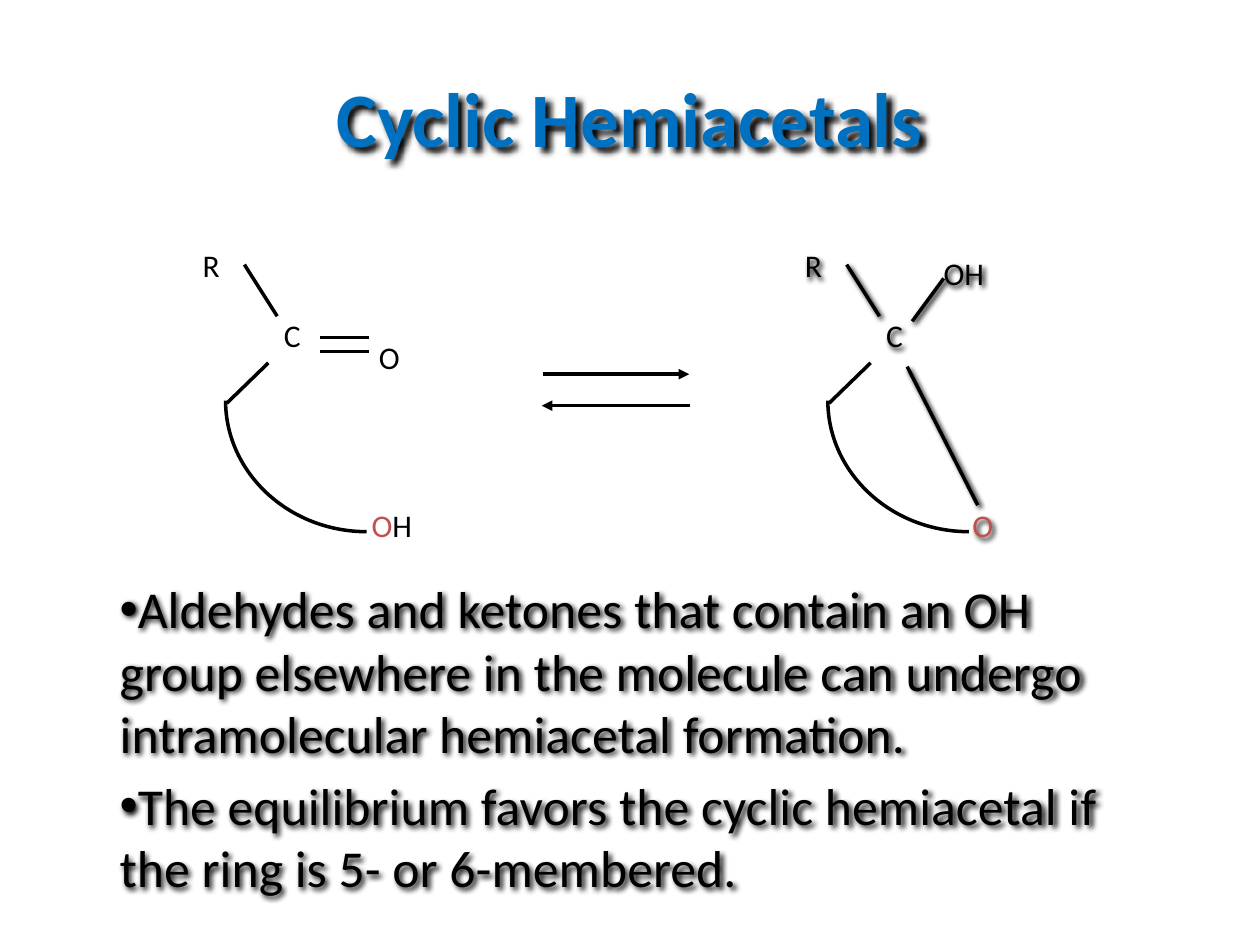
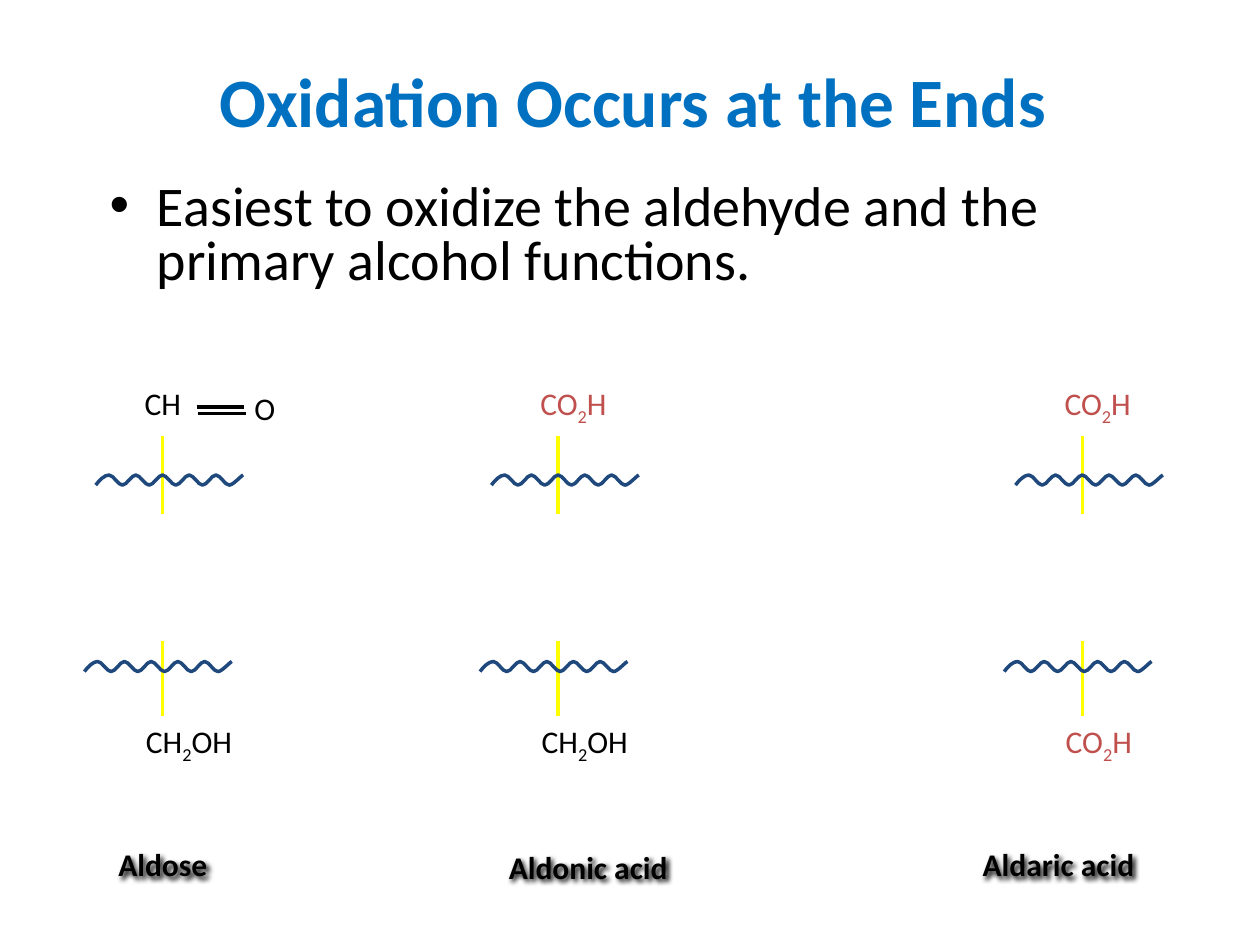
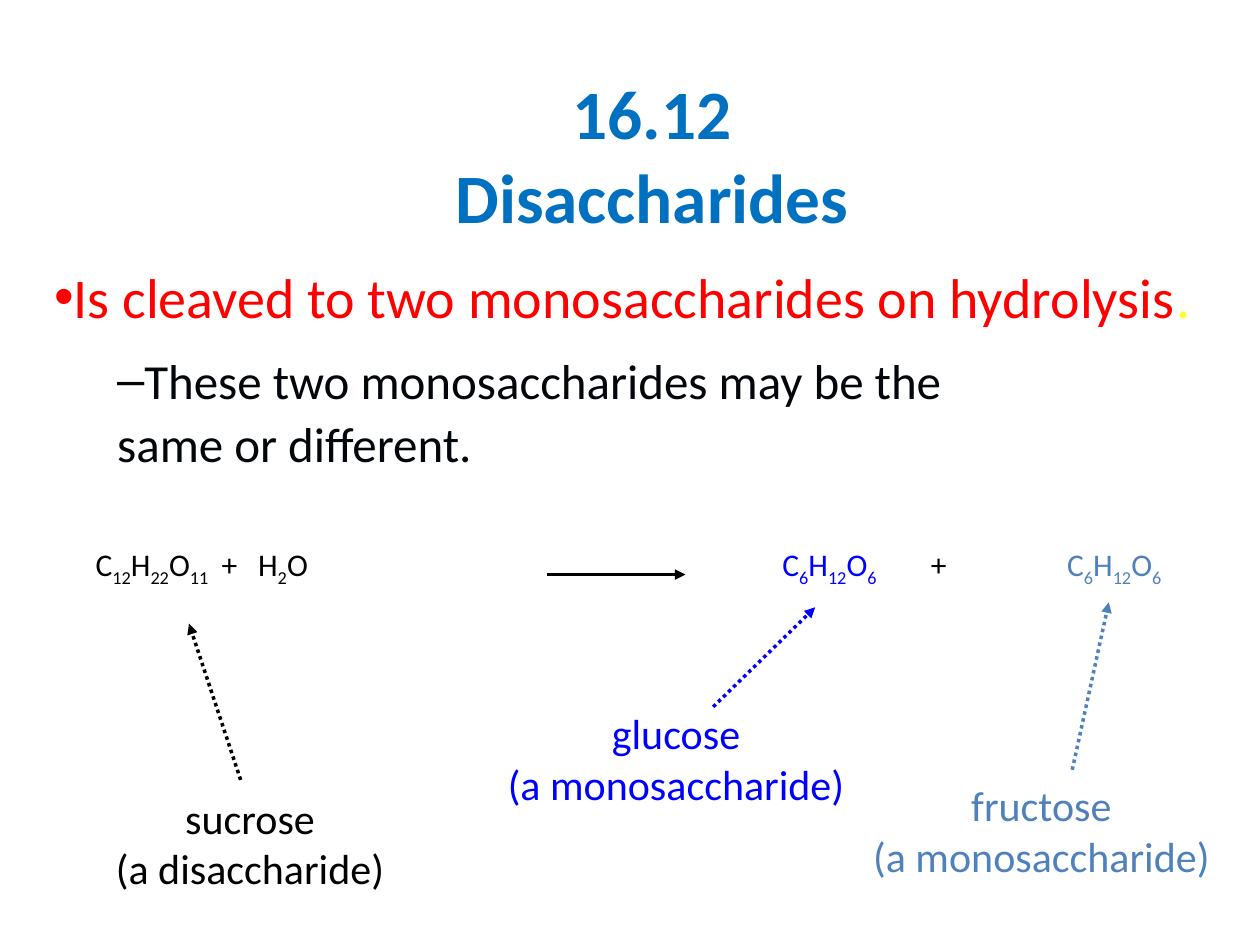
from lxml.etree import SubElement as sub
from pptx import Presentation
from pptx.dml.color import RGBColor
from pptx.enum.dml import MSO_LINE as Dash
from pptx.enum.shapes import MSO_CONNECTOR as Conn
from pptx.enum.text import MSO_ANCHOR as Anchor, MSO_AUTO_SIZE as Fit, PP_ALIGN as Align
from pptx.oxml.ns import qn
from pptx.util import Emu, Pt

SCALE = 9144
FONT = "Calibri"
BLACK = RGBColor(0x00, 0x00, 0x00)
TITLE = RGBColor(0x00, 0x70, 0xC0)
BRICK = RGBColor(0xC0, 0x50, 0x4D)
YELLOW = RGBColor(0xFF, 0xFF, 0x00)
LEMON = RGBColor(0xFE, 0xFF, 0x2A)
NAVY = RGBColor(0x1F, 0x49, 0x7D)
RED = RGBColor(0xFF, 0x00, 0x00)
INK = RGBColor(0x03, 0x07, 0x0C)
BLUE = RGBColor(0x00, 0x00, 0xFF)
STEEL = RGBColor(0x4F, 0x81, 0xBD)


def px(num):
    """Turn px into EMU."""
    return Emu(round(num * SCALE))


def shade(shape, on=True, far=2):
    """Give a shape a soft black shadow, or none."""
    fx = sub(shape._element.spPr, qn("a:effectLst"))
    if on:
        drop = sub(fx, qn("a:outerShdw"), blurRad=str(Pt(3)), dist=str(Pt(far)),
                   dir="2700000", algn="tl", rotWithShape="0")
        sub(drop, qn("a:srgbClr"), val=str(BLACK))


def style(para, size, tint=BLACK, bold=False):
    """Set the font of a whole paragraph."""
    font = para.font
    font.name, font.size, font.bold = FONT, Pt(size), bold
    font.color.rgb = tint


def write(para, text, tint=None):
    """Add runs, with the parts between underscores as subscripts."""
    for i, part in enumerate(text.split("_")):
        if part:
            run = para.add_run()
            run.text = part
            if tint is not None:
                run.font.color.rgb = tint
            if i % 2:
                run._r.get_or_add_rPr().set("baseline", "-25000")


def place(shape, box):
    """Move a placeholder and keep its text size fixed."""
    shape.left, shape.top, shape.width, shape.height = map(px, box)
    shape.text_frame.auto_size = Fit.NONE


def start(deck, text, box, size=39.6):
    """Add a slide with its title and return the slide."""
    slide = deck.slides.add_slide(deck.slide_layouts[1])
    title = slide.shapes.title
    place(title, box)
    title.text_frame.vertical_anchor = Anchor.MIDDLE
    para = title.text_frame.paragraphs[0]
    para.text = text
    para.alignment = Align.CENTER
    style(para, size, TITLE, True)
    return slide


def points(slide, box, items):
    """Fill the body with (text, size, colour, level) items."""
    body = slide.placeholders[1]
    place(body, box)
    frame = body.text_frame
    for i, (text, size, tint, level) in enumerate(items):
        para = frame.add_paragraph() if i else frame.paragraphs[0]
        para.text, para.level = text, level
        style(para, size, tint)
    return body


def flush(para, left=0):
    """Let the bullet run on with the text."""
    props = para._p.get_or_add_pPr()
    props.set("marL", str(px(left)))
    props.set("indent", "0")


def label(slide, box, text, tint=BLACK, size=18, bold=False, align=Align.LEFT,
          lead=None, glow=False):
    """Add one unwrapped text box in one colour."""
    area = slide.shapes.add_textbox(*map(px, box))
    frame = area.text_frame
    frame.word_wrap, frame.auto_size = False, Fit.SHAPE_TO_FIT_TEXT
    para = frame.paragraphs[0]
    para.alignment, para.line_spacing = align, lead
    style(para, size, tint, bold)
    if "_" in text:
        write(para, text)
    else:
        para.text = text
    if glow:
        shade(area)


def sums(slide, box, stops, parts):
    """Add one side of an equation, spaced by tab stops."""
    area = slide.shapes.add_textbox(*map(px, box))
    area.text_frame.word_wrap = True
    para = area.text_frame.paragraphs[0]
    if stops:
        tabs = sub(para._p.get_or_add_pPr(), qn("a:tabLst"))
        for stop in stops:
            sub(tabs, qn("a:tab"), pos=str(px(stop)), algn="l")
    style(para, 18)
    for text, tint in parts:
        write(para, text, tint)


def line(slide, ends, tint=BLACK, arrow=False, dots=False, glow=False):
    """Draw a bond or an arrow."""
    bond = slide.shapes.add_connector(Conn.STRAIGHT, *map(px, ends))
    bond.line.color.rgb, bond.line.width = tint, Pt(2)
    if dots:
        bond.line.dash_style = Dash.ROUND_DOT
    if arrow:
        sub(bond.line._get_or_add_ln(), qn("a:tailEnd"), type="triangle")
    shade(bond, glow)


def curve(slide, left, top, spots, tint=BLACK):
    """Draw Bézier arcs: a first spot, then three spots for each arc."""
    spots = [(px(left + x), px(top + y)) for x, y in spots]
    pen = slide.shapes.build_freeform(*spots[0])
    pen.add_line_segments(spots[1:], close=False)
    shape = pen.convert_to_shape()
    legs = list(shape._element.iter(qn("a:lnTo")))
    trace = legs[0].getparent()
    for i in range(0, len(legs), 3):
        arc = sub(trace, qn("a:cubicBezTo"))
        for leg in legs[i:i + 3]:
            arc.append(leg[0])
            trace.remove(leg)
    shape.fill.background()
    shape.line.color.rgb, shape.line.width = tint, Pt(2)
    shape.shadow.inherit = False


def wave(slide, left, top):
    """Draw a wavy break of eleven half waves."""
    step = 10.6
    spots = [(0, 8), (3, 4), (7, 0), (step, 0)]
    for i in range(2, 11):
        x, y = step * i, 8 - 8 * (i % 2)
        spots += [(x - 7, 8 - y), (x - 3.5, y), (x, y)]
    spots += [(109, 8), (115, 1), (117, 0)]
    curve(slide, left, top, spots, NAVY)


def ring(slide, left, glow):
    """Draw the R, C and chain that both forms share."""
    label(slide, (left + 29, 246, 48, 56), "C", align=Align.CENTER, glow=glow)
    line(slide, (left + 15, 210, left + 41, 251), glow=glow)
    label(slide, (left - 28, 172, 48, 58), "R", lead=Pt(35), glow=glow)
    curve(slide, left, 318, [(112, 104), (50, 104), (0, 57), (0, 0)])
    line(slide, (left + 34, 288, left + 1, 320))


def chain(slide, axis, top, end, tint):
    """Draw a broken sugar chain with its two end groups."""
    line(slide, (axis, 408, axis, 346), YELLOW)
    line(slide, (axis, 509, axis, 568), YELLOW)
    label(slide, (axis - 24, 300, 121, 56), *top)
    label(slide, (axis - 23, 568, 149, 56), end, tint)
    wave(slide, axis - 62, 525)
    wave(slide, axis - 53, 377)


def cyclic(deck):
    """Build the hemiacetal slide."""
    slide = start(deck, "Cyclic Hemiacetals", (50, 30, 900, 125), 44)
    shade(slide.shapes.title, far=3)
    body = points(slide, (85, 453, 831, 278), [
        ("Aldehydes and ketones that contain an OH group elsewhere in the "
         "molecule can undergo intramolecular hemiacetal formation.", 29.6, BLACK, 0),
        ("The equilibrium favors the cyclic hemiacetal if the ring is "
         "5- or 6-membered.", 29.6, BLACK, 0)])
    shade(body)
    for para in body.text_frame.paragraphs:
        flush(para)
    ring(slide, 179, False)
    for y in (268, 279):
        line(slide, (254, y, 293, y))
    label(slide, (291, 245, 50, 58), "O", lead=Pt(35))
    sums(slide, (285, 397, 78, 56), (), [("O", BRICK), ("H", BLACK)])
    line(slide, (431, 297, 547, 297), arrow=True)
    line(slide, (548, 322, 430, 322), arrow=True)
    ring(slide, 657, True)
    label(slide, (739, 178, 78, 58), "OH", lead=Pt(35), glow=True)
    label(slide, (762, 397, 50, 56), "O", BRICK, glow=True)
    line(slide, (724, 255, 749, 221), glow=True)
    line(slide, (720, 291, 776, 401), glow=True)


def ends(deck):
    """Build the oxidation slide."""
    slide = start(deck, "Oxidation Occurs at the Ends", (123, 40, 759, 78))
    body = points(slide, (77, 141, 855, 101), [
        ("Easiest to oxidize the aldehyde and the primary alcohol functions.",
         32, BLACK, 0)])
    body.text_frame.paragraphs[0].line_spacing = 0.8
    acid = ("CO_2_H", BRICK)
    for left, top, wide, name in ((394, 668, 147, "Aldonic acid"),
                                  (770, 666, 142, "Aldaric acid"),
                                  (84, 666, 91, "Aldose")):
        label(slide, (left, top, wide, 40), name, bold=True, glow=True)
    chain(slide, 443, acid, "CH_2_OH", BLACK)
    chain(slide, 859, acid, *acid)
    chain(slide, 129, ("CH", BLACK), "CH_2_OH", BLACK)
    line(slide, (156, 323, 194, 323))
    line(slide, (157, 328, 195, 328))
    label(slide, (192, 304, 50, 56), "O")


def sugars(deck):
    """Build the disaccharide slide."""
    slide = start(deck, "16.12\vDisaccharides", (235, 69, 565, 106))
    body = points(slide, (41, 209, 919, 176), [
        ("Is cleaved to two monosaccharides on hydrolysis", 32, RED, 0),
        ("These two monosaccharides may be the \vsame or different.", 28, INK, 1)])
    frame = body.text_frame
    frame.margin_left = frame.margin_right = px(2)
    frame.margin_top = frame.margin_bottom = px(3)
    for para, left in zip(frame.paragraphs, (0, 50)):
        flush(para, left)
        para.line_spacing, para.space_before, para.space_after = Pt(36), Pt(0), Pt(9)
    write(frame.paragraphs[0], ".", LEMON)
    sums(slide, (66, 428, 345, 56), (100, 129),
         [("C_12_H_22_O_11_\t+\tH_2_O", BLACK)])
    line(slide, (434, 456, 544, 456), arrow=True)
    sums(slide, (577, 428, 382, 40), (34, 152, 260),
         [("\tC_6_H_12_O_6_", BLUE), ("\t+\t", BLACK), ("C_6_H_12_O_6_", STEEL)])
    for box, text, tint, way in (
            ((70, 624, 257, 90), "sucrose\v(a disaccharide)", BLACK,
             (191, 619, 150, 495)),
            ((379, 557, 315, 77), "glucose\v(a monosaccharide)", BLUE,
             (566, 561, 647, 482)),
            ((669, 614, 315, 77), "fructose\v(a monosaccharide)", STEEL,
             (851, 611, 880, 478))):
        label(slide, box, text, tint, 24, align=Align.CENTER)
        line(slide, way, tint, arrow=True, dots=True)


def main():
    """Build and save the deck."""
    deck = Presentation()
    deck.slide_width, deck.slide_height = px(1000), px(750)
    cyclic(deck)
    ends(deck)
    sugars(deck)
    deck.save("out.pptx")


if __name__ == "__main__":
    main()
